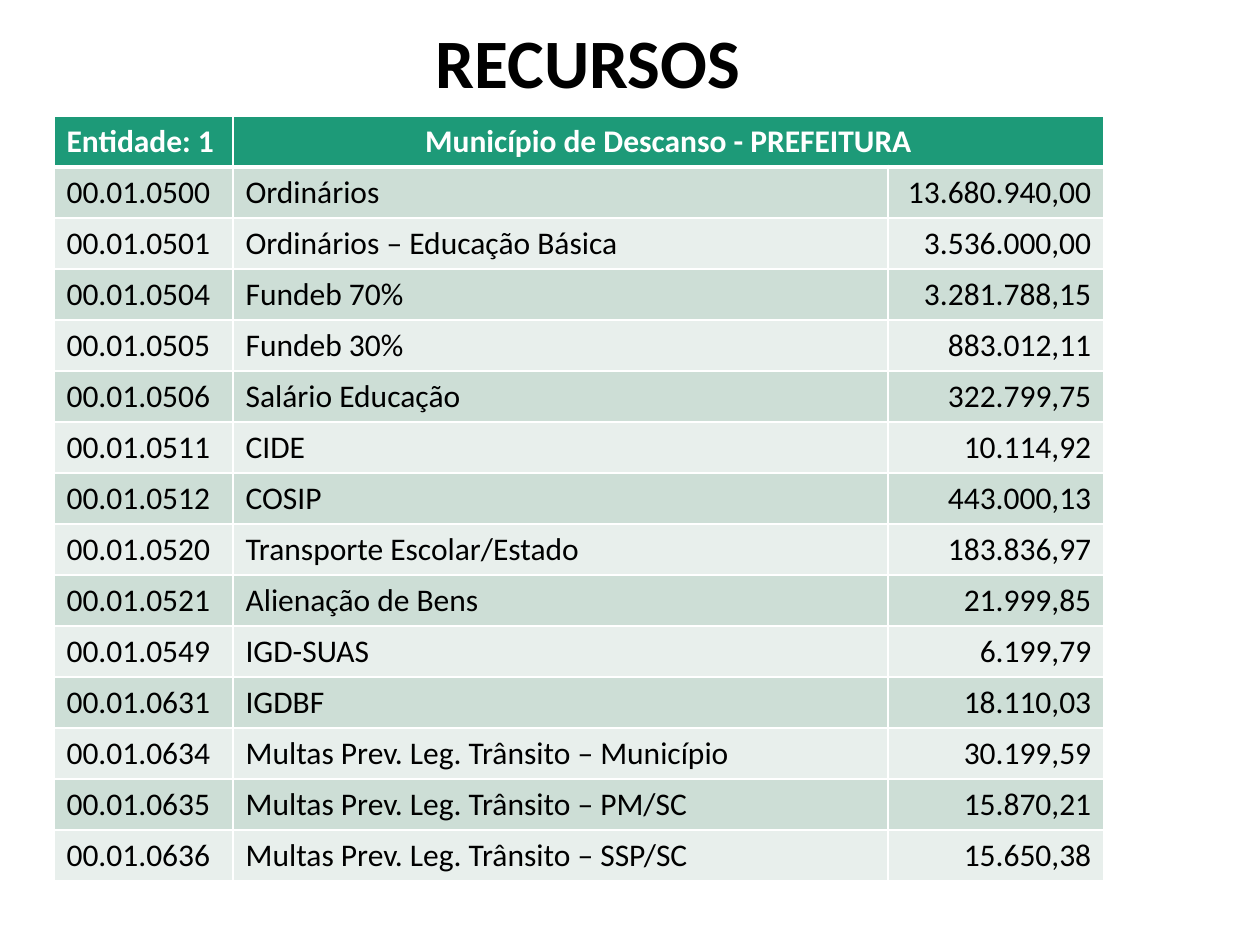
"""Builds the RECURSOS slide: a title above a table of municipal funding sources."""
from dataclasses import dataclass

from lxml import etree
from pptx import Presentation
from pptx.dml.color import RGBColor
from pptx.enum.text import MSO_ANCHOR, PP_ALIGN
from pptx.oxml.ns import qn
from pptx.util import Pt

LEFT, CENTER, RIGHT = PP_ALIGN.LEFT, PP_ALIGN.CENTER, PP_ALIGN.RIGHT
MIDDLE = MSO_ANCHOR.MIDDLE
PX = 914400 // 126


@dataclass(frozen=True)
class Theme:
    font: str = "Calibri"
    title_size: float = 39.6
    table_size: float = 18
    ink: str = "000000"
    white: str = "FFFFFF"
    header: str = "1D9A78"
    bands: tuple = ("CDDED6", "E8EFEC")
    rule: float = 1
    header_rule: float = 3


THEME = Theme()


def write(frame, text, size, color, bold, align):
    frame.text = text
    paragraph = frame.paragraphs[0]
    paragraph.alignment = align
    font = paragraph.runs[0].font
    font.name, font.size, font.bold = THEME.font, Pt(size), bold
    font.color.rgb = RGBColor.from_string(color)


def paint(cell, fill, top, bottom):
    properties = cell._tc.get_or_add_tcPr()
    sides = {"a:lnL": THEME.rule, "a:lnR": THEME.rule, "a:lnT": top, "a:lnB": bottom}
    for side, width in sides.items():
        line = etree.SubElement(properties, qn(side), w=str(Pt(width)))
        solid = etree.SubElement(line, qn("a:solidFill"))
        etree.SubElement(solid, qn("a:srgbClr"), val=THEME.white)
    cell.fill.solid()
    cell.fill.fore_color.rgb = RGBColor.from_string(fill)


HEADINGS = ("Entidade: 1", "Município de Descanso - PREFEITURA", "")
RESOURCES = [
    ("00.01.0500", "Ordinários", "13.680.940,00"),
    ("00.01.0501", "Ordinários – Educação Básica", "3.536.000,00"),
    ("00.01.0504", "Fundeb 70%", "3.281.788,15"),
    ("00.01.0505", "Fundeb 30%", "883.012,11"),
    ("00.01.0506", "Salário Educação", "322.799,75"),
    ("00.01.0511", "CIDE", "10.114,92"),
    ("00.01.0512", "COSIP", "443.000,13"),
    ("00.01.0520", "Transporte Escolar/Estado", "183.836,97"),
    ("00.01.0521", "Alienação de Bens", "21.999,85"),
    ("00.01.0549", "IGD-SUAS", "6.199,79"),
    ("00.01.0631", "IGDBF", "18.110,03"),
    ("00.01.0634", "Multas Prev. Leg. Trânsito – Município", "30.199,59"),
    ("00.01.0635", "Multas Prev. Leg. Trânsito – PM/SC", "15.870,21"),
    ("00.01.0636", "Multas Prev. Leg. Trânsito – SSP/SC", "15.650,38"),
]
COLUMN_WIDTHS = (179, 655, 216)
ROW_HEIGHT = 51

presentation = Presentation()
presentation.slide_width, presentation.slide_height = 1260 * PX, 945 * PX
slide = presentation.slides.add_slide(presentation.slide_layouts[6])

title = slide.shapes.add_textbox(63 * PX, 26 * PX, 1050 * PX, 80 * PX).text_frame
title.word_wrap = True
title.vertical_anchor = MIDDLE
write(title, "RECURSOS", THEME.title_size, THEME.ink, True, CENTER)
title.paragraphs[0].line_spacing = 0.9

row_count = len(RESOURCES) + 1
resources = slide.shapes.add_table(
    row_count, len(COLUMN_WIDTHS), 54 * PX, 116 * PX,
    sum(COLUMN_WIDTHS) * PX, row_count * ROW_HEIGHT * PX,
).table
for column, width in zip(resources.columns, COLUMN_WIDTHS):
    column.width = width * PX
for row in resources.rows:
    row.height = ROW_HEIGHT * PX

for index, heading in enumerate(HEADINGS):
    cell = resources.cell(0, index)
    paint(cell, THEME.header, THEME.rule, THEME.header_rule)
    if heading:
        align = CENTER if index else LEFT
        write(cell.text_frame, heading, THEME.table_size, THEME.white, True, align)
resources.cell(0, 1).merge(resources.cell(0, 2))

for row_index, resource in enumerate(RESOURCES, start=1):
    band = THEME.bands[(row_index - 1) % 2]
    top = THEME.header_rule if row_index == 1 else THEME.rule
    for column_index, (value, align) in enumerate(zip(resource, (LEFT, LEFT, RIGHT))):
        cell = resources.cell(row_index, column_index)
        paint(cell, band, top, THEME.rule)
        write(cell.text_frame, value, THEME.table_size, THEME.ink, False, align)

presentation.save("out.pptx")
